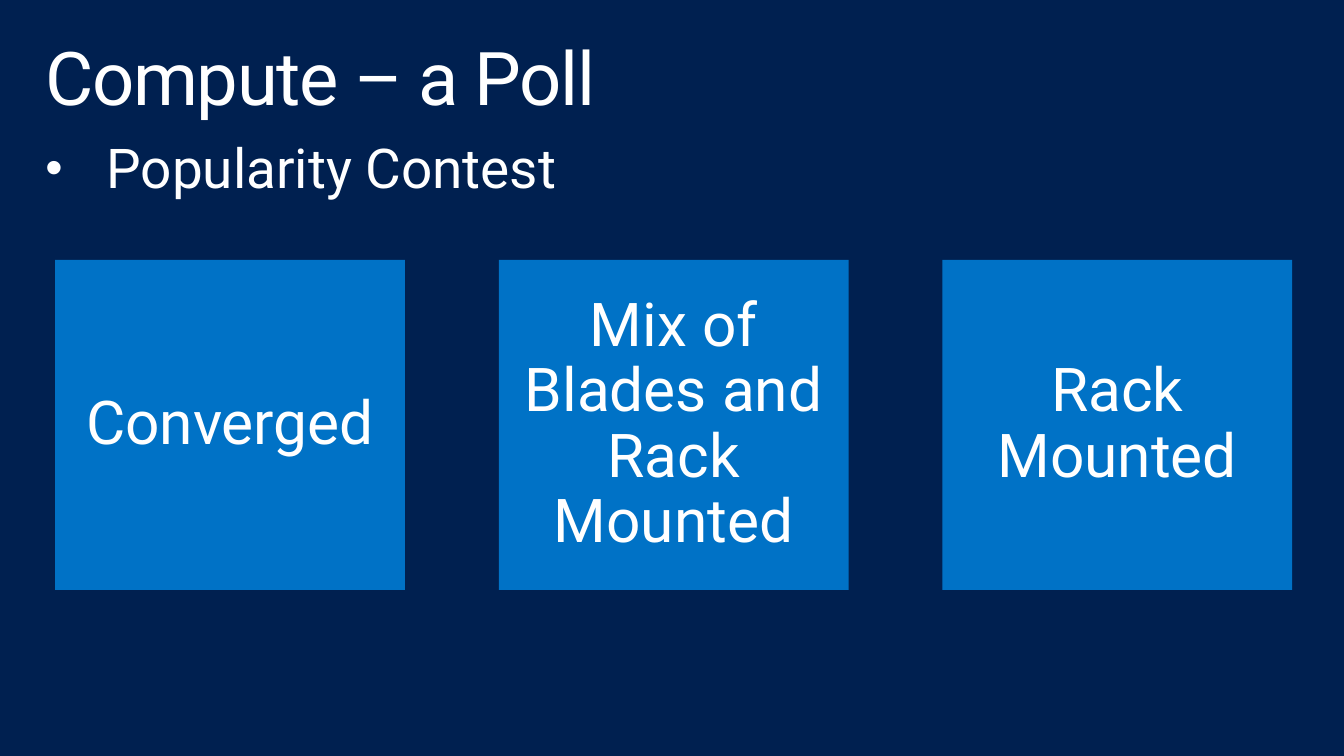
from dataclasses import dataclass

from lxml.etree import SubElement
from pptx import Presentation
from pptx.dml.color import RGBColor
from pptx.enum.shapes import MSO_SHAPE
from pptx.enum.text import MSO_ANCHOR, PP_ALIGN
from pptx.oxml.ns import qn
from pptx.slide import Slide
from pptx.text.text import TextFrame
from pptx.util import Cm, Pt

COLORS = {"navy": "002050", "blue": "0072C6", "white": "FFFFFF"}
FONT = "Roboto"
TILE_LEFT, TILE_TOP, TILE_PITCH = 1.42, 6.68, 11.4
TILE_WIDTH, TILE_HEIGHT = 8.99, 8.48


@dataclass
class Heading:
    text: str
    top: float
    height: float
    size: int
    spacing: int = 0
    bullet: bool = False


HEADINGS = [
    Heading("Compute – a Poll", 0.81, 2.54, 54, spacing=-100),
    Heading("Popularity Contest", 3.38, 2.06, 40, bullet=True),
]
POLL_OPTIONS = ["Converged", "Mix of Blades and Rack Mounted", "Rack Mounted"]


def color(name: str) -> RGBColor:
    return RGBColor.from_string(COLORS[name])


def write(tf: TextFrame, text: str, *, size: int, inset_x: float, inset_y: float,
          align: PP_ALIGN = PP_ALIGN.LEFT, anchor: MSO_ANCHOR = MSO_ANCHOR.TOP,
          spacing: int = 0, bullet: bool = False) -> None:
    """Fill a text frame; spacing is in hundredths of a point."""
    tf.word_wrap = True
    tf.vertical_anchor = anchor
    tf.margin_left = tf.margin_right = Cm(inset_x)
    tf.margin_top = tf.margin_bottom = Cm(inset_y)
    p = tf.paragraphs[0]
    p.alignment = align
    p.line_spacing = 0.9
    r = p.add_run()
    r.text = text
    r.font.name = FONT
    r.font.size = Pt(size)
    r.font.color.rgb = color("white")
    if spacing:
        r.font._element.set("spc", str(spacing))
    if bullet:
        add_bullet(p._p.get_or_add_pPr())


def add_bullet(pPr) -> None:
    indent = Cm(1.57)
    pPr.set("marL", str(indent))
    pPr.set("indent", str(-indent))
    SubElement(pPr, qn("a:buSzPct"), val="90000")
    SubElement(pPr, qn("a:buFont"), typeface="Arial")
    SubElement(pPr, qn("a:buChar"), char="•")


def add_heading(s: Slide, heading: Heading) -> None:
    sp = s.shapes.add_textbox(Cm(0.76), Cm(heading.top), Cm(33.02), Cm(heading.height))
    write(sp.text_frame, heading.text, size=heading.size, inset_x=0.41, inset_y=0.25,
          spacing=heading.spacing, bullet=heading.bullet)


def add_tile(s: Slide, column: int, text: str) -> None:
    sp = s.shapes.add_shape(MSO_SHAPE.RECTANGLE, Cm(TILE_LEFT + column * TILE_PITCH),
                            Cm(TILE_TOP), Cm(TILE_WIDTH), Cm(TILE_HEIGHT))
    sp.shadow.inherit = False
    sp.fill.solid()
    sp.fill.fore_color.rgb = color("blue")
    sp.line.fill.background()
    write(sp.text_frame, text, size=44, inset_x=0.51, inset_y=0.41,
          align=PP_ALIGN.CENTER, anchor=MSO_ANCHOR.MIDDLE)


def main() -> None:
    prs = Presentation()
    prs.slide_width, prs.slide_height = Cm(34.54), Cm(19.43)
    s = prs.slides.add_slide(prs.slide_layouts[6])
    s.background.fill.solid()
    s.background.fill.fore_color.rgb = color("navy")
    for heading in HEADINGS:
        add_heading(s, heading)
    for column, option in enumerate(POLL_OPTIONS):
        add_tile(s, column, option)
    prs.save("out.pptx")


if __name__ == "__main__":
    main()
